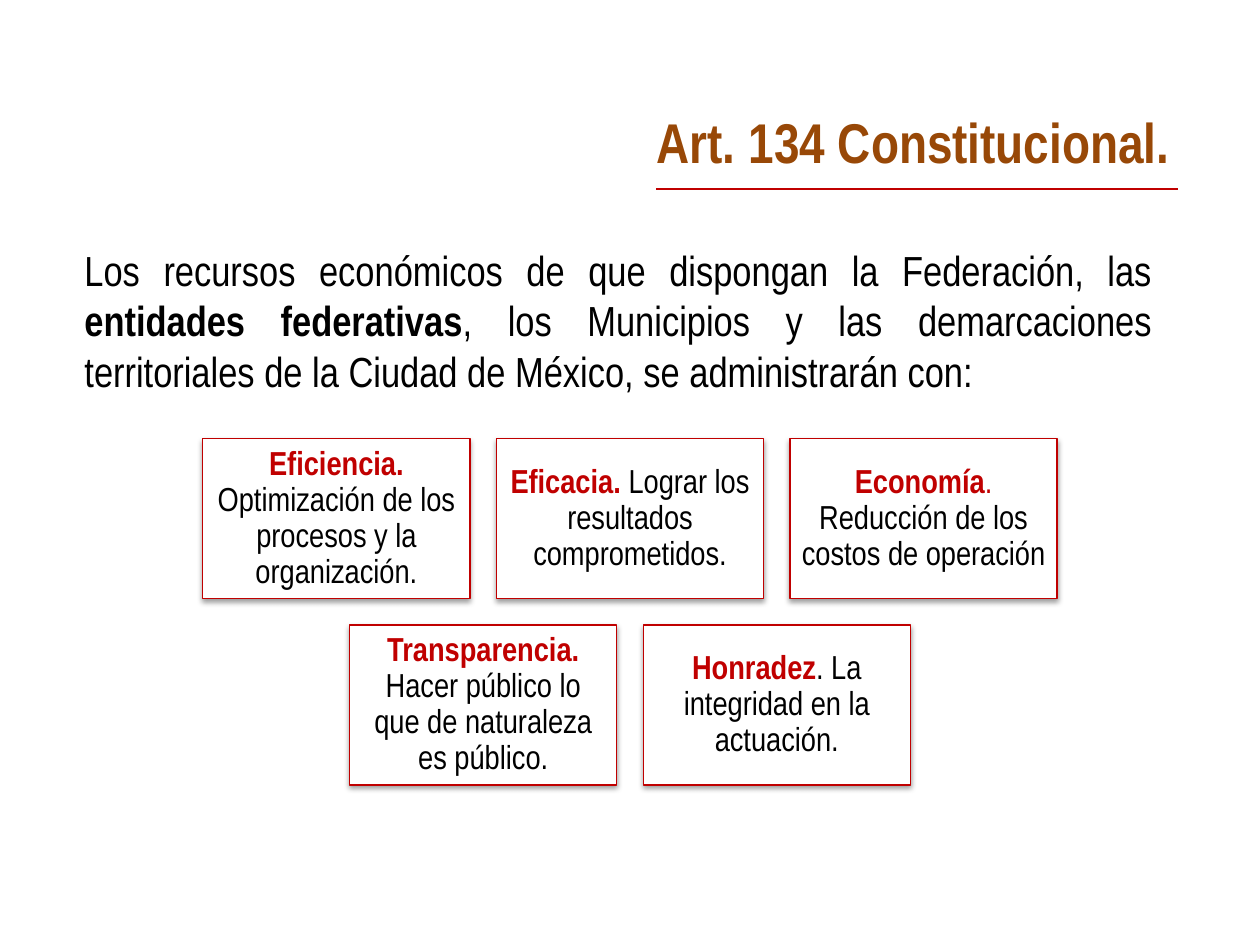
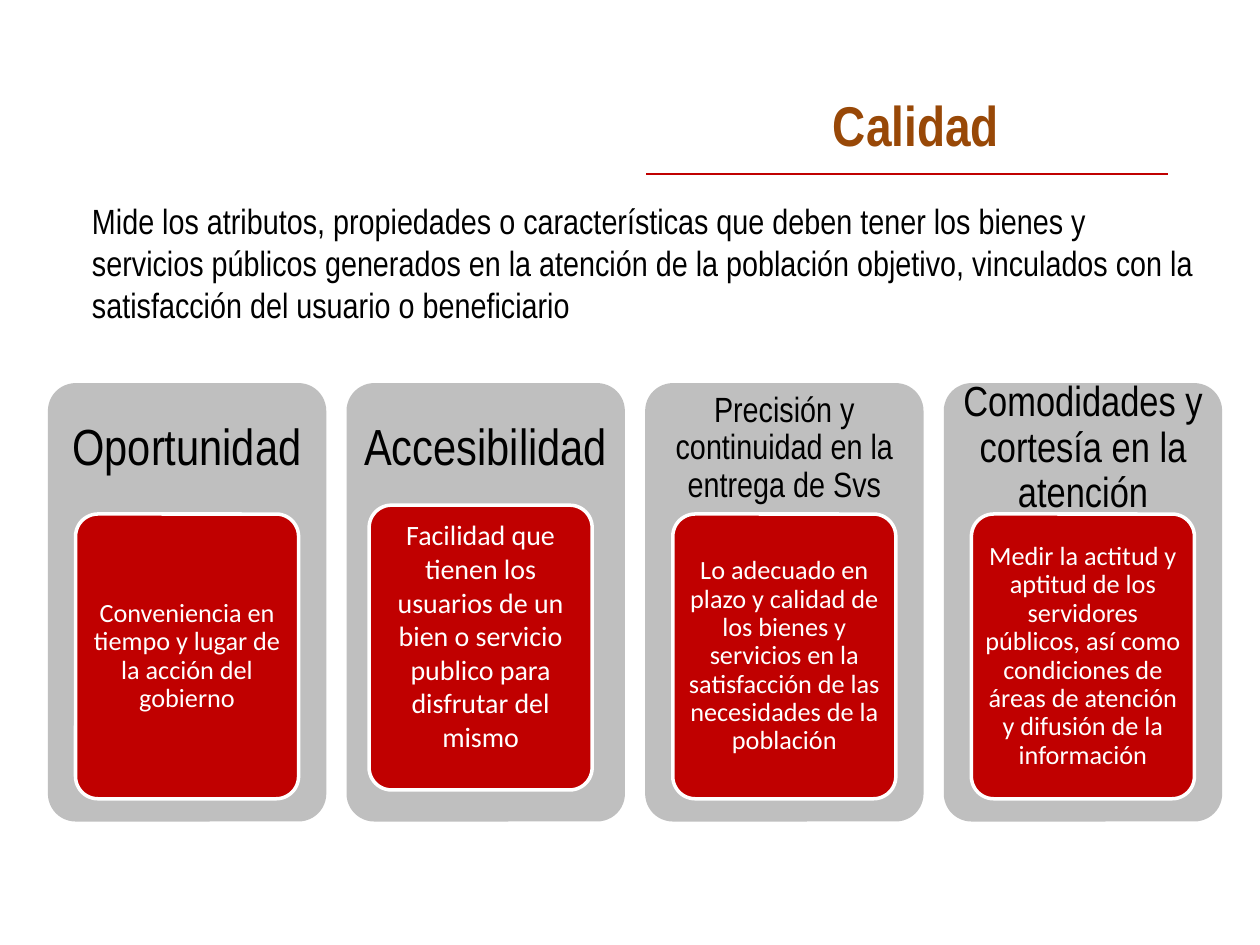
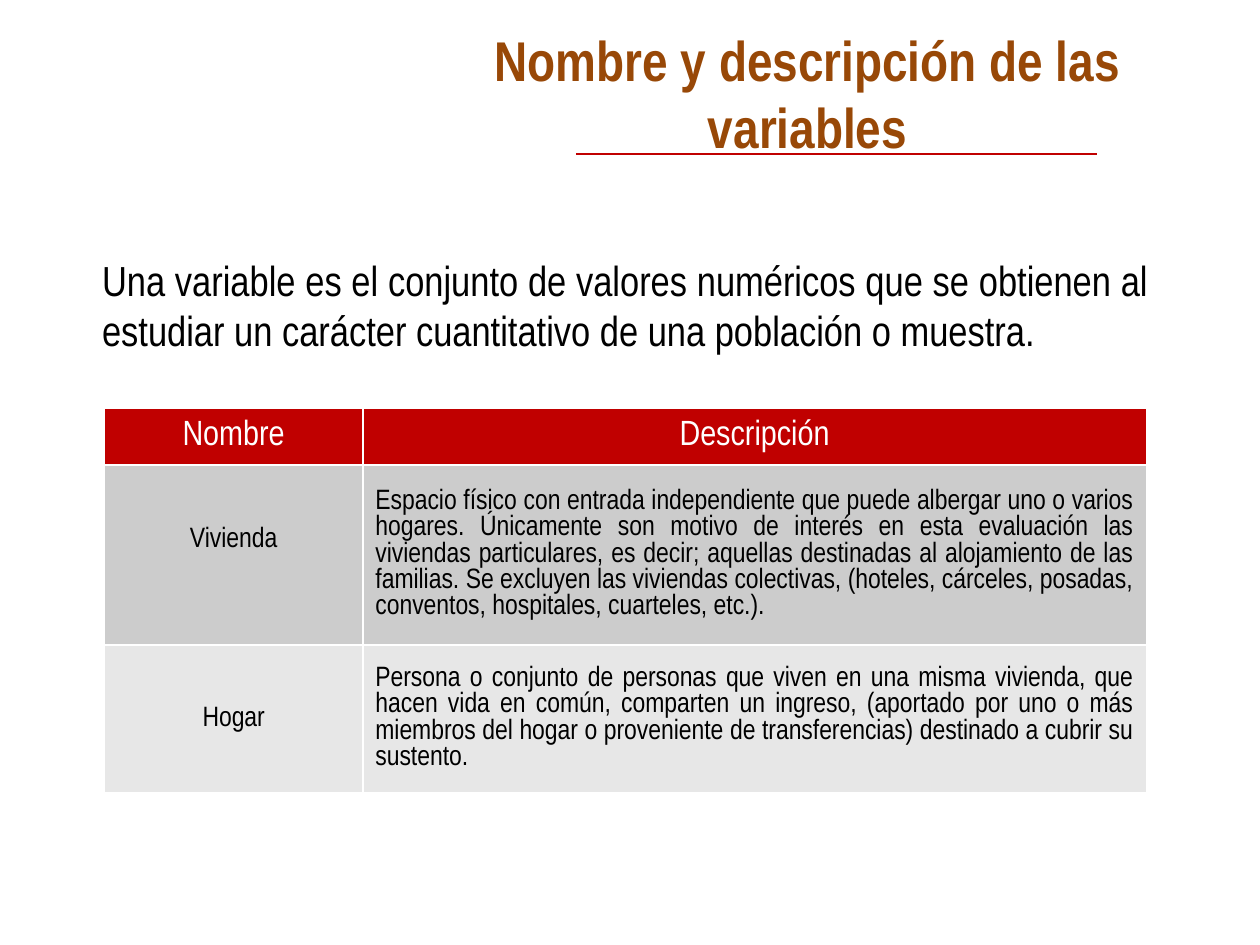
from dataclasses import dataclass

from lxml.etree import SubElement
from pptx import Presentation
from pptx.dml.color import RGBColor
from pptx.enum.shapes import MSO_CONNECTOR, MSO_SHAPE
from pptx.enum.text import MSO_ANCHOR as Anchor, MSO_AUTO_SIZE, PP_ALIGN as Align
from pptx.oxml.ns import qn
from pptx.util import Inches, Pt

COLORS = {
    "title": "984807",
    "red": "C00000",
    "black": "000000",
    "white": "FFFFFF",
    "panel": "BFBFBF",
    "row_dark": "CCCCCC",
    "row_light": "E7E7E7",
}
NARROW, CALIBRI = "Arial Narrow", "Calibri"
RULE_LENGTH = 4.14


@dataclass(frozen=True)
class Area:
    left: float
    top: float
    width: float
    height: float

    def lengths(self) -> tuple:
        return tuple(Inches(v) for v in (self.left, self.top, self.width, self.height))


@dataclass(frozen=True)
class Span:
    text: str
    color: str = "black"
    bold: bool = False


@dataclass(frozen=True)
class Style:
    size: float
    font: str = NARROW
    align: Align = Align.CENTER
    spacing: float = 1.0


@dataclass(frozen=True)
class Panel:
    heading: str
    size: float
    inset: float
    detail: str


@dataclass(frozen=True)
class Variable:
    name: str
    description: str
    fill: str
    height: float
    name_bottom: float = 0.05


TITLE_STYLE = Style(32)
CARD_STYLE = Style(19, spacing=0.9)
DETAIL_STYLE = Style(15, CALIBRI, spacing=0.9)


# Shared helpers
def rgb(name: str) -> RGBColor:
    return RGBColor.from_string(COLORS[name])


def write(frame, spans: list[Span], style: Style, plain: bool = False) -> None:
    para = frame.paragraphs[0]
    if plain:
        props = para._p.get_or_add_pPr()
        props.set("marL", "0")
        props.set("indent", "0")
        SubElement(props, qn("a:buNone"))
    para.alignment = style.align
    para.line_spacing = style.spacing
    para.space_before = Pt(0)
    for span in spans:
        run = para.add_run()
        run.text = span.text
        run.font.name = style.font
        run.font.size = Pt(style.size)
        run.font.bold = span.bold
        run.font.color.rgb = rgb(span.color)


def set_frame(frame, anchor: Anchor, across: float, down: float, wrap: bool = True) -> None:
    frame.word_wrap = wrap
    frame.auto_size = MSO_AUTO_SIZE.NONE
    frame.vertical_anchor = anchor
    frame.margin_left = frame.margin_right = Inches(across)
    frame.margin_top = frame.margin_bottom = Inches(down)


def fill_placeholder(holder, area: Area, spans: list[Span], style: Style, wrap: bool = True) -> None:
    holder.left, holder.top, holder.width, holder.height = area.lengths()
    set_frame(holder.text_frame, Anchor.TOP, 0.1, 0.05, wrap)
    write(holder.text_frame, spans, style, plain=True)


def add_shape(page, kind: MSO_SHAPE, area: Area, fill: str, line: str | None = None, width: float = 1):
    shape = page.shapes.add_shape(kind, *area.lengths())
    shape.shadow.inherit = False
    shape.fill.solid()
    shape.fill.fore_color.rgb = rgb(fill)
    if line:
        shape.line.color.rgb = rgb(line)
        shape.line.width = Pt(width)
    else:
        shape.line.fill.background()
    return shape


def add_drop_shadow(shape) -> None:
    effects = shape._element.spPr.find(qn("a:effectLst"))
    shadow = SubElement(effects, qn("a:outerShdw"), blurRad=str(Pt(3.1)), dist=str(Pt(1.6)),
                        dir="5400000", rotWithShape="0")
    color = SubElement(shadow, qn("a:srgbClr"), val=COLORS["black"])
    SubElement(color, qn("a:alpha"), val="38000")


def add_page(deck, title: str, title_area: Area, rule: tuple[float, float],
             intro: list[Span], intro_area: Area, intro_style: Style, wrap_title: bool = True):
    """Add a slide with its title, red rule and introductory text."""
    page = deck.slides.add_slide(deck.slide_layouts[1])
    fill_placeholder(page.shapes.title, title_area, [Span(title, "title", True)], TITLE_STYLE, wrap_title)
    fill_placeholder(page.placeholders[1], intro_area, intro, intro_style)
    left, top = rule
    line = page.shapes.add_connector(MSO_CONNECTOR.STRAIGHT, Inches(left), Inches(top),
                                     Inches(left + RULE_LENGTH), Inches(top))
    line.line.color.rgb = rgb("red")
    line.line.width = Pt(1.25)
    SubElement(line._element.spPr, qn("a:effectLst"))
    return page


# Slide 1: principles in centred rows of cards
CARD_WIDTH, CARD_HEIGHT, CARD_PITCH = 2.12, 1.27, 2.33
CARDS_TOP, CARD_ROW_PITCH, CARDS_CENTER = 3.48, 1.48, 5.0
PRINCIPLES = [
    [
        [Span("Eficiencia. ", "red", True), Span("Optimización de los procesos y la organización.")],
        [Span("Eficacia. ", "red", True), Span("Lograr los resultados comprometidos.")],
        [Span("Economía", "red", True), Span(". ", "red"), Span("Reducción de los costos de operación")],
    ],
    [
        [Span("Transparencia. ", "red", True), Span("Hacer público lo que de naturaleza es público.")],
        [Span("Honradez", "red", True), Span(". La integridad en la actuación.")],
    ],
]


def build_principles(deck) -> None:
    intro = [
        Span("Los recursos económicos de que dispongan la Federación, las "),
        Span("entidades federativas", bold=True),
        Span(", los Municipios y las demarcaciones territoriales de la Ciudad de México, "
             "se administrarán con:"),
    ]
    page = add_page(deck, "Art. 134 Constitucional.", Area(5, 0.8, 4.5, 0.64), (5.21, 1.5),
                    intro, Area(0.57, 1.89, 8.67, 1.31), Style(24, align=Align.JUSTIFY))
    for row, cards in enumerate(PRINCIPLES):
        row_width = CARD_WIDTH + (len(cards) - 1) * CARD_PITCH
        for column, spans in enumerate(cards):
            area = Area(CARDS_CENTER - row_width / 2 + column * CARD_PITCH,
                        CARDS_TOP + row * CARD_ROW_PITCH, CARD_WIDTH, CARD_HEIGHT)
            card = add_shape(page, MSO_SHAPE.RECTANGLE, area, "white", "red", 0.75)
            add_drop_shadow(card)
            set_frame(card.text_frame, Anchor.MIDDLE, 0.08, 0.08)
            write(card.text_frame, spans, CARD_STYLE)


# Slide 2: quality attributes in four panels
PANEL_LEFT, PANEL_TOP, PANEL_PITCH = 0.38, 3.04, 2.37
PANEL_WIDTH, PANEL_HEIGHT, HEADING_HEIGHT = 2.21, 3.48, 1.04
PANELS = [
    Panel("Oportunidad", 29, 0.12, "Conveniencia en tiempo y lugar de la acción del gobierno"),
    Panel("Accesibilidad", 29, 0.12,
          "Facilidad que tienen los usuarios de un bien o servicio publico para disfrutar del mismo"),
    Panel("Precisión y continuidad en la entrega de Svs", 20, 0.08,
          "Lo adecuado en plazo y calidad de los bienes y servicios en la satisfacción "
          "de las necesidades de la población"),
    Panel("Comodidades y cortesía en la atención", 24, 0.1,
          "Medir la actitud y aptitud de los servidores públicos, así como condiciones "
          "de áreas de atención y difusión de la información"),
]
RAISED_PANEL = "Accesibilidad"


def add_panel(page, panel: Panel, left: float) -> None:
    back = add_shape(page, MSO_SHAPE.ROUNDED_RECTANGLE,
                     Area(left, PANEL_TOP, PANEL_WIDTH, PANEL_HEIGHT), "panel")
    back.adjustments[0] = 0.1
    heading = page.shapes.add_textbox(*Area(left, PANEL_TOP, PANEL_WIDTH, HEADING_HEIGHT).lengths())
    set_frame(heading.text_frame, Anchor.MIDDLE, panel.inset, panel.inset)
    write(heading.text_frame, [Span(panel.heading)], Style(panel.size, spacing=0.9))

    raised = panel.heading == RAISED_PANEL
    area = Area(left + 0.18, 4.01, 1.77, 2.26) if raised else Area(left + 0.22, 4.08, 1.77, 2.26)
    detail = add_shape(page, MSO_SHAPE.ROUNDED_RECTANGLE, area, "red", "white", 2)
    detail.adjustments[0] = 0.1
    if raised:
        set_frame(detail.text_frame, Anchor.TOP, 0.1, 0.05)
    else:
        set_frame(detail.text_frame, Anchor.MIDDLE, 0.04, 0.03)
    write(detail.text_frame, [Span(panel.detail, "white")],
          Style(16, CALIBRI) if raised else DETAIL_STYLE)


def build_quality(deck) -> None:
    intro = [Span("Mide los atributos, propiedades o características que deben tener los bienes y "
                  "servicios públicos generados en la atención de la población objetivo, vinculados "
                  "con la satisfacción del usuario o beneficiario")]
    page = add_page(deck, "Calidad", Area(6.49, 0.67, 1.56, 0.64), (5.13, 1.38),
                    intro, Area(0.63, 1.53, 9, 1.11), Style(20, align=Align.LEFT), wrap_title=False)
    for column, panel in enumerate(PANELS):
        add_panel(page, panel, PANEL_LEFT + column * PANEL_PITCH)


# Slide 3: table of variables
COLUMN_WIDTHS = (2.05, 6.22)
HEADER_HEIGHT = 0.45
VARIABLES = [
    Variable("Vivienda",
             "Espacio físico con entrada independiente que puede albergar uno o varios hogares. "
             "Únicamente son motivo de interés en esta evaluación las viviendas particulares, es "
             "decir; aquellas destinadas al alojamiento de las familias. Se excluyen las viviendas "
             "colectivas, (hoteles, cárceles, posadas, conventos, hospitales, cuarteles, etc.). ",
             "row_dark", 1.43, name_bottom=0.29),
    Variable("Hogar",
             "Persona o conjunto de personas que viven en una misma vivienda, que hacen vida en "
             "común, comparten un ingreso, (aportado por uno o más miembros del hogar o proveniente "
             "de transferencias) destinado a cubrir su sustento.",
             "row_light", 1.17),
]


def fill_cell(cell, span: Span, style: Style, fill: str) -> None:
    props = cell._tc.get_or_add_tcPr()
    for side in "LRTB":
        border = SubElement(props, qn(f"a:ln{side}"), w=str(Pt(1)))
        SubElement(SubElement(border, qn("a:solidFill")), qn("a:srgbClr"), val=COLORS["white"])
    cell.fill.solid()
    cell.fill.fore_color.rgb = rgb(fill)
    cell.vertical_anchor = Anchor.MIDDLE
    write(cell.text_frame, [span], style)


def build_variables(deck) -> None:
    intro = [Span("Una variable es el conjunto de valores numéricos que se obtienen al estudiar "
                  "un carácter cuantitativo de una población o muestra.")]
    page = add_page(deck, "Nombre y descripción de las variables", Area(3, 0.15, 6.82, 1.18),
                    (4.57, 1.22), intro, Area(0.71, 1.97, 8.5, 0.91), Style(24, align=Align.JUSTIFY))
    heights = [HEADER_HEIGHT] + [variable.height for variable in VARIABLES]
    area = Area(0.83, 3.24, sum(COLUMN_WIDTHS), sum(heights))
    table = page.shapes.add_table(len(heights), len(COLUMN_WIDTHS), *area.lengths()).table
    for column, width in zip(table.columns, COLUMN_WIDTHS):
        column.width = Inches(width)
    for row, height in zip(table.rows, heights):
        row.height = Inches(height)

    for column, label in enumerate(("Nombre", "Descripción")):
        fill_cell(table.cell(0, column), Span(label, "white"), Style(20), "red")
    for row, variable in enumerate(VARIABLES, start=1):
        name = table.cell(row, 0)
        fill_cell(name, Span(variable.name), Style(16), variable.fill)
        name.margin_bottom = Inches(variable.name_bottom)
        fill_cell(table.cell(row, 1), Span(variable.description),
                  Style(16, align=Align.JUSTIFY), variable.fill)


def main() -> None:
    deck = Presentation()
    deck.slide_width, deck.slide_height = Inches(10), Inches(7.5)
    build_principles(deck)
    build_quality(deck)
    build_variables(deck)
    deck.save("out.pptx")


if __name__ == "__main__":
    main()
